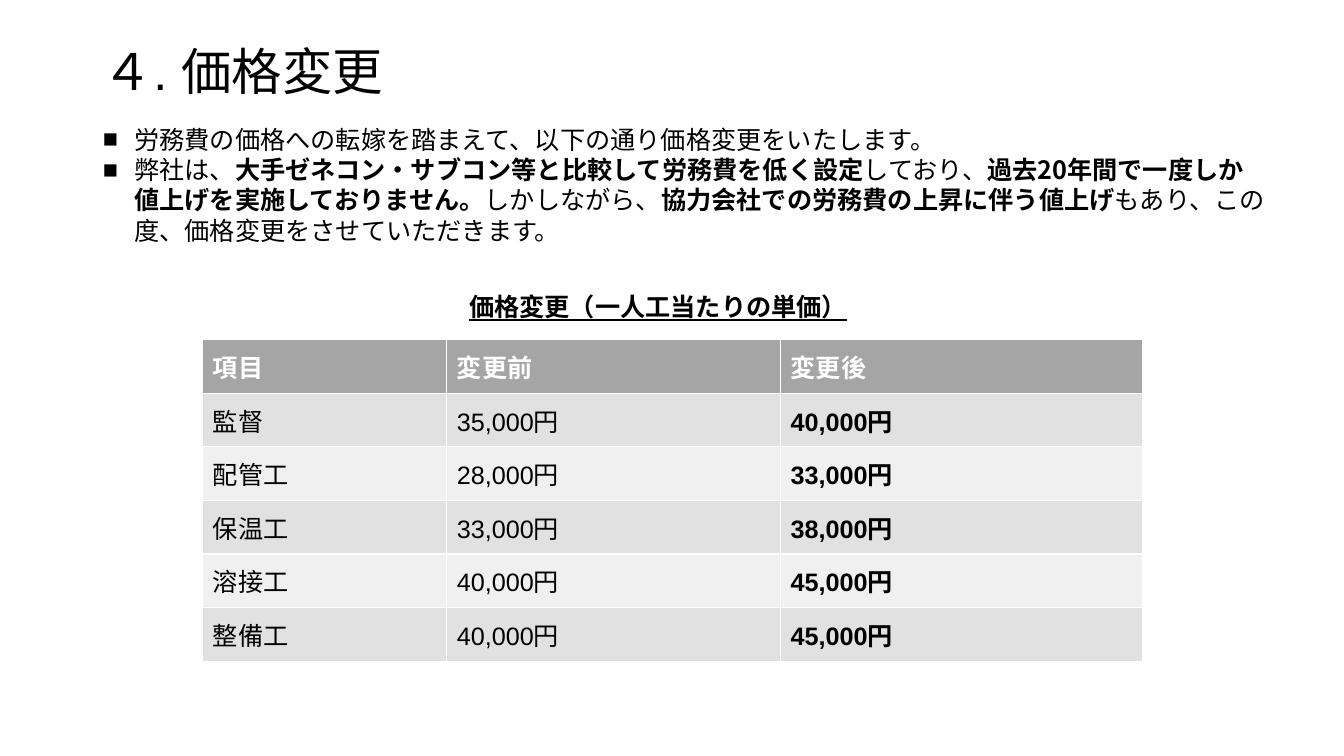
from lxml import etree
from pptx import Presentation, util as u
from pptx.dml.color import RGBColor
from pptx.enum import text as t
from pptx.oxml.ns import qn

BLACK = RGBColor(0, 0, 0)
WHITE = RGBColor(0xFF, 0xFF, 0xFF)
HEAD = RGBColor(0xA5, 0xA5, 0xA5)
DARK = RGBColor(0xE1, 0xE1, 0xE1)
LIGHT = RGBColor(0xF0, 0xF0, 0xF0)
SANS = "Arial"
NOTO = "Noto Sans CJK JP"

POINTS = [
    [("労務費の価格への転嫁を踏まえて、以下の通り価格変更をいたします。", False)],
    [("弊社は、", False),
     ("大手ゼネコン・サブコン等と比較して労務費を低く設定", True),
     ("しており、", False),
     ("過去20年間で一度しか値上げを実施しておりません。", True),
     ("しかしながら、", False),
     ("協力会社での労務費の上昇に伴う値上げ", True),
     ("もあり、この度、価格変更をさせていただきます。", False)],
]
PRICES = [
    ("項目", "変更前", "変更後"),
    ("監督", "35,000円", "40,000円"),
    ("配管工", "28,000円", "33,000円"),
    ("保温工", "33,000円", "38,000円"),
    ("溶接工", "40,000円", "45,000円"),
    ("整備工", "40,000円", "45,000円"),
]
WIDTHS = (6.15, 8.41, 9.12)
ROW = 1.35


def assign(item, form):
    for key, value in form.items():
        setattr(item, key, value)


def place(shape, left, top, width, height):
    assign(shape, {"left": u.Cm(left), "top": u.Cm(top),
                   "width": u.Cm(width), "height": u.Cm(height)})


def write(para, words, color=BLACK, **form):
    run = para.add_run()
    run.text = words
    assign(run.font, {"name": SANS, "size": u.Pt(18), "bold": False, **form})
    run.font.color.rgb = color
    east = etree.SubElement(run._r.get_or_add_rPr(), qn("a:ea"))
    east.set("typeface", NOTO)


def bullet(para):
    props = para._p.get_or_add_pPr()
    props.set("marL", str(u.Cm(0.79)))
    props.set("indent", str(u.Cm(-0.79)))
    for tag, key, value in (("a:buFont", "typeface", SANS), ("a:buChar", "char", "■")):
        etree.SubElement(props, qn(tag)).set(key, value)


def add_title(slide):
    title = slide.shapes.title
    place(title, 2.34, 1.02, 29.21, 1.68)
    assign(title.text_frame, {"vertical_anchor": t.MSO_ANCHOR.MIDDLE,
                              "auto_size": t.MSO_AUTO_SIZE.NONE})
    para = title.text_frame.paragraphs[0]
    assign(para, {"alignment": t.PP_ALIGN.LEFT, "line_spacing": 0.9})
    write(para, "４. 価格変更", size=u.Pt(36))


def add_list(slide):
    body = slide.placeholders[1]
    place(body, 2.34, 3, 29.87, 3.33)
    frame = body.text_frame
    frame.auto_size = t.MSO_AUTO_SIZE.NONE
    for i, point in enumerate(POINTS):
        para = frame.add_paragraph() if i else frame.paragraphs[0]
        para.space_before = u.Pt(0)
        bullet(para)
        for words, bold in point:
            write(para, words, name=NOTO, bold=bold)


def add_label(slide):
    box = slide.shapes.add_textbox(u.Cm(1.65), u.Cm(7.21), u.Cm(29.87), u.Cm(1.02))
    box.text_frame.word_wrap = True
    para = box.text_frame.paragraphs[0]
    para.alignment = t.PP_ALIGN.CENTER
    write(para, "価格変更（一人工当たりの単価）", name=NOTO, bold=True, underline=True)


def add_prices(slide):
    frame = slide.shapes.add_table(len(PRICES), len(WIDTHS), u.Cm(5.11), u.Cm(8.56),
                                   u.Cm(sum(WIDTHS)), u.Cm(ROW * len(PRICES)))
    table = frame.table
    for col, width in zip(table.columns, WIDTHS):
        col.width = u.Cm(width)
    for r, row in enumerate(PRICES):
        fill = (DARK if r % 2 else LIGHT) if r else HEAD
        for c, words in enumerate(row):
            cell = table.cell(r, c)
            cell.vertical_anchor = t.MSO_ANCHOR.MIDDLE
            cell.fill.solid()
            cell.fill.fore_color.rgb = fill
            write(cell.text_frame.paragraphs[0], words,
                  BLACK if r else WHITE, bold=r == 0 or c == 2)


def main():
    deck = Presentation()
    assign(deck, {"slide_width": u.Cm(33.87), "slide_height": u.Cm(19.05)})
    slide = deck.slides.add_slide(deck.slide_layouts[1])
    add_title(slide)
    add_list(slide)
    add_prices(slide)
    add_label(slide)
    deck.save("out.pptx")


if __name__ == "__main__":
    main()
